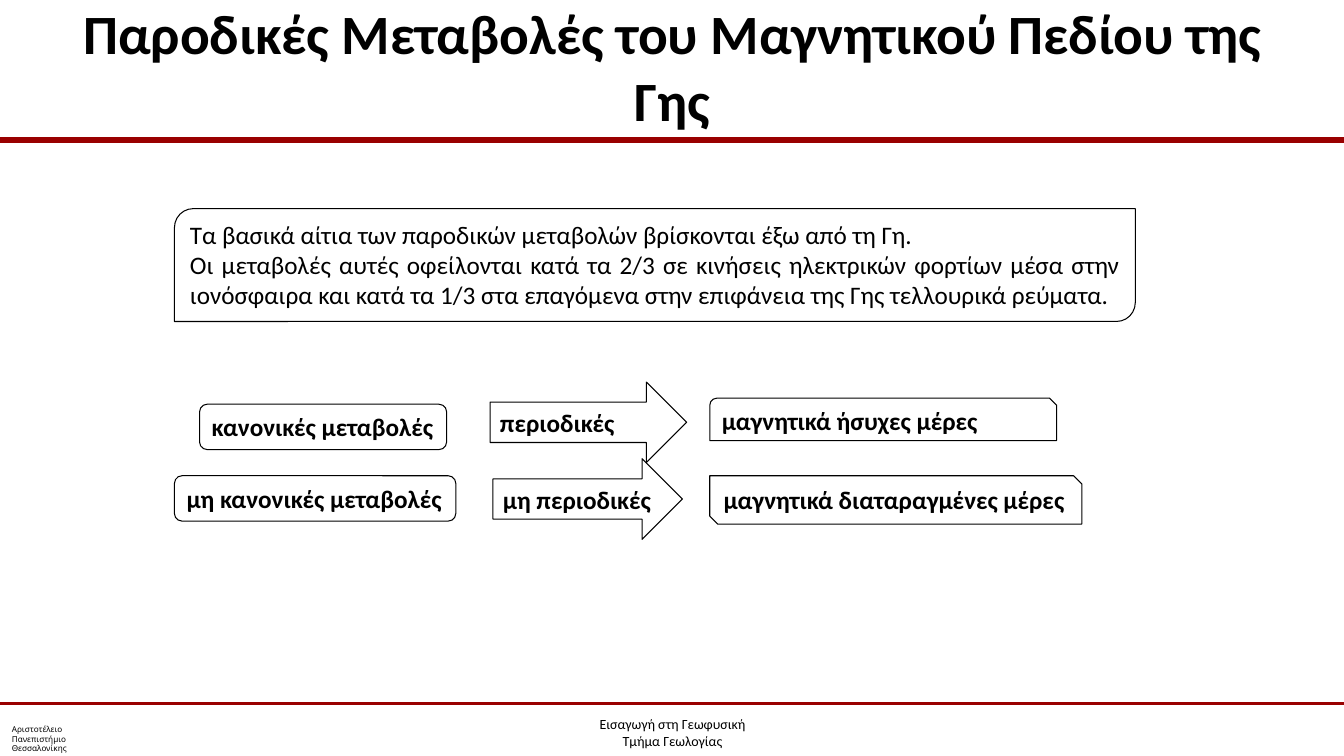
from pptx import Presentation
from pptx.util import Inches, Pt
from pptx.dml.color import RGBColor
from pptx.enum.shapes import MSO_SHAPE as Form, MSO_CONNECTOR as Link
from pptx.enum.text import PP_ALIGN as Align, MSO_ANCHOR as Hold, MSO_AUTO_SIZE as Fit
from lxml.etree import SubElement

BLACK = RGBColor(0, 0, 0)
WHITE = RGBColor(255, 255, 255)
RED = RGBColor(0x99, 0, 0)

deck = Presentation()
deck.slide_width, deck.slide_height = Inches(13.33), Inches(7.5)
slide = deck.slides.add_slide(deck.slide_layouts[6])
col, row = deck.slide_width / 100, deck.slide_height / 100


def put(text, x, y, w, h, form=None, size=18, bold=False, face="Calibri",
        align=Align.LEFT, hold=Hold.TOP, wrap=True, first=None, pad=0.05):
    spot = [int(x * col), int(y * row), int(w * col), int(h * row)]
    if form is None:
        box = slide.shapes.add_textbox(*spot)
    else:
        box = slide.shapes.add_shape(form, *spot)
        box.shadow.inherit = False
        box.fill.solid()
        box.fill.fore_color.rgb = WHITE
        box.line.color.rgb = BLACK
        box.line.width = Pt(0.75)
    frame = box.text_frame
    frame.text = text
    frame.word_wrap = wrap
    frame.auto_size = Fit.SHAPE_TO_FIT_TEXT if form else Fit.NONE
    frame.vertical_anchor = hold
    frame.margin_top = frame.margin_bottom = Inches(pad)
    for para in frame.paragraphs:
        para.alignment = align
        font = para.font
        font.name, font.size, font.bold = face, Pt(size), bold
        font.color.rgb = BLACK
    if first:
        frame.paragraphs[0].line_spacing = first


for y, thick in [(18.53, 4), (93.07, 2)]:
    level = int(y * row)
    rule = slide.shapes.add_connector(Link.STRAIGHT, 0, level, deck.slide_width, level)
    rule.line.color.rgb = RED
    rule.line.width = Pt(thick)
    props = rule._element.spPr
    SubElement(props, "{http://schemas.openxmlformats.org/drawingml/2006/main}effectLst")

put("Αριστοτέλειο\nΠανεπιστήμιο\nΘεσσαλονίκης", 0.15, 95.47, 7.88, 4.53,
    size=5.8, face="League Spartan", hold=Hold.MIDDLE)
put("Εισαγωγή στη Γεωφυσική\nΤμήμα Γεωλογίας", 34.28, 92, 31.51, 8,
    size=10, align=Align.CENTER, first=2.2, pad=0)
put("Τα βασικά αίτια των παροδικών μεταβολών βρίσκονται έξω από τη Γη.\n"
    "Οι μεταβολές αυτές οφείλονται κατά τα 2/3 σε κινήσεις ηλεκτρικών φορτίων "
    "μέσα στην ιονόσφαιρα και κατά τα 1/3 στα επαγόμενα στην επιφάνεια της Γης "
    "τελλουρικά ρεύματα.", 12.98, 27.6, 71.49, 14.93,
    form=Form.ROUND_2_DIAG_RECTANGLE, align=Align.JUSTIFY)

terms = [
    ("κανονικές μεταβολές", 14.85, 53.47, 18.38, 6, Form.ROUNDED_RECTANGLE, False),
    ("μαγνητικά ήσυχες μέρες", 52.81, 52.67, 25.81, 5.6, Form.SNIP_ROUND_RECTANGLE, True),
    ("μη περιοδικές", 36.68, 60.67, 14.1, 10.67, Form.RIGHT_ARROW, False),
    ("μαγνητικά διαταραγμένες μέρες", 52.81, 62.93, 27.68, 6.4,
     Form.SNIP_2_DIAG_RECTANGLE, False),
    ("μη κανονικές μεταβολές", 12.98, 62.93, 20.93, 6, Form.ROUNDED_RECTANGLE, False),
    ("περιοδικές", 36.46, 50.53, 14.63, 10.67, Form.RIGHT_ARROW, True),
]
for text, x, y, w, h, form, wrap in terms:
    put(text, x, y, w, h, form=form, bold=True, wrap=wrap)

put("Παροδικές Μεταβολές του Μαγνητικού Πεδίου της Γης", 5.03, 0.4, 90.02, 16.67,
    size=39.6, bold=True, align=Align.CENTER, hold=Hold.MIDDLE)

deck.save("out.pptx")
